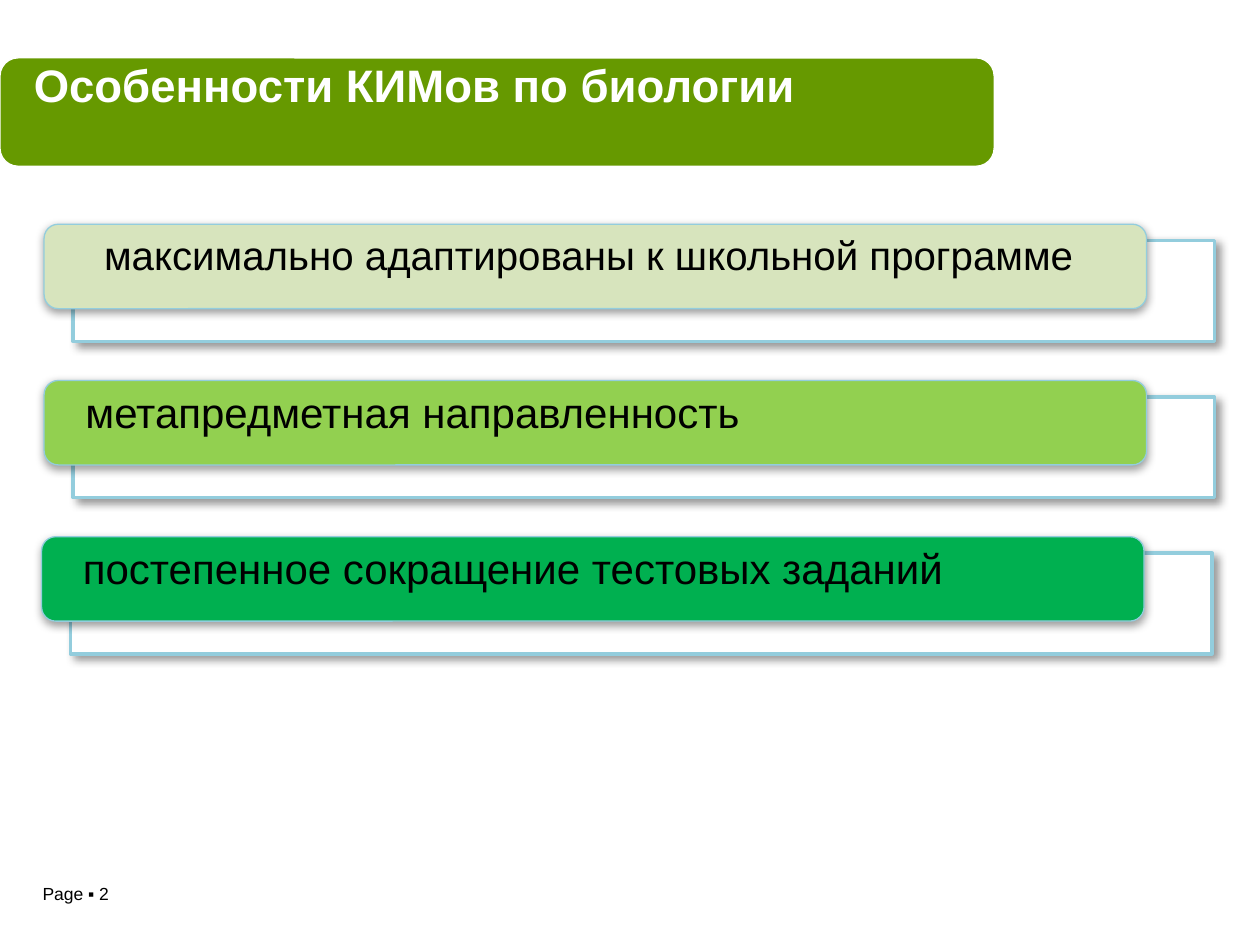
from dataclasses import dataclass
from typing import Optional

from lxml.etree import SubElement
from pptx import Presentation
from pptx.dml.color import RGBColor
from pptx.enum.shapes import MSO_SHAPE
from pptx.enum.text import MSO_ANCHOR, PP_ALIGN
from pptx.oxml.ns import qn
from pptx.util import Inches, Pt


@dataclass(frozen=True)
class Theme:
    font: str = "Arial"
    white: str = "FFFFFF"
    text: str = "000000"
    banner: str = "669900"
    outline: str = "93CDDD"
    title_size: float = 26
    footer_size: float = 10
    thin: float = 0.75
    thick: float = 2
    corner: float = 0.167


@dataclass(frozen=True)
class Box:
    left: float
    top: float
    width: float
    height: float

    def lengths(self) -> tuple:
        return tuple(Inches(n) for n in (self.left, self.top, self.width, self.height))


@dataclass(frozen=True)
class Shadow:
    opacity: int
    blur: float
    distance: float
    angle: int


@dataclass(frozen=True)
class Feature:
    wording: str
    fill: str
    left: float = 0.35
    size: float = 24
    align: PP_ALIGN = PP_ALIGN.LEFT


THEME = Theme()
FRAME_SHADOW = Shadow(40, 5, 3, 45)
BAR_SHADOW = Shadow(38, 5, 1.6, 90)
FIRST_TOP, FEATURE_STEP = 1.78, 1.24
FEATURES = [
    Feature("максимально адаптированы к школьной программе", "D7E4BD",
            size=23, align=PP_ALIGN.CENTER),
    Feature("метапредметная направленность", "92D050"),
    Feature("постепенное сокращение тестовых заданий", "00B050", left=0.33),
]


def add_panel(shapes, kind: MSO_SHAPE, box: Box, fill: str, outline: str,
              weight: float, shadow: Optional[Shadow] = None) -> None:
    panel = shapes.add_shape(kind, *box.lengths())
    if kind == MSO_SHAPE.ROUNDED_RECTANGLE:
        panel.adjustments[0] = THEME.corner
    panel.fill.solid()
    panel.fill.fore_color.rgb = RGBColor.from_string(fill)
    panel.line.color.rgb = RGBColor.from_string(outline)
    panel.line.width = Pt(weight)
    panel.shadow.inherit = False
    if shadow:
        effects = panel.element.spPr.find(qn("a:effectLst"))
        outer = SubElement(effects, qn("a:outerShdw"),
                           blurRad=str(Pt(shadow.blur)), dist=str(Pt(shadow.distance)),
                           dir=str(shadow.angle * 60000), algn="ctr", rotWithShape="0")
        color = SubElement(outer, qn("a:srgbClr"), val=THEME.text)
        SubElement(color, qn("a:alpha"), val=str(shadow.opacity * 1000))


def add_label(shapes, box: Box, wording: str, size: float, color: str = THEME.text,
              bold: bool = False, align: PP_ALIGN = PP_ALIGN.LEFT,
              line_spacing: float = 1.0) -> None:
    frame = shapes.add_textbox(*box.lengths()).text_frame
    frame.word_wrap = True
    frame.vertical_anchor = MSO_ANCHOR.TOP
    paragraph = frame.paragraphs[0]
    paragraph.alignment = align
    paragraph.line_spacing = line_spacing
    run = paragraph.add_run()
    run.text = wording
    run.font.name = THEME.font
    run.font.size = Pt(size)
    run.font.bold = bold
    run.font.color.rgb = RGBColor.from_string(color)


def add_feature(slide, feature: Feature, top: float) -> None:
    """Group an offset frame, the coloured bar over it and the bar's wording."""
    shapes = slide.shapes.add_group_shape().shapes
    inner_left = feature.left + 0.23
    add_panel(shapes, MSO_SHAPE.RECTANGLE, Box(inner_left, top + 0.13, 9.06, 0.8),
              THEME.white, THEME.outline, THEME.thick, FRAME_SHADOW)
    add_panel(shapes, MSO_SHAPE.ROUNDED_RECTANGLE, Box(feature.left, top, 8.75, 0.67),
              feature.fill, THEME.outline, THEME.thin, BAR_SHADOW)
    add_label(shapes, Box(inner_left, top, 8.2, 0.5), feature.wording,
              feature.size, align=feature.align)


def main() -> None:
    deck = Presentation()
    deck.slide_width, deck.slide_height = Inches(10), Inches(7.5)
    slide = deck.slides.add_slide(deck.slide_layouts[6])

    add_label(slide.shapes, Box(0.24, 6.96, 1.47, 0.27), "Page ▪ 2", THEME.footer_size)
    add_panel(slide.shapes, MSO_SHAPE.ROUNDED_RECTANGLE, Box(0, 0.46, 7.89, 0.86),
              THEME.banner, THEME.white, THEME.thin)
    add_label(slide.shapes, Box(0.17, 0.45, 9.47, 0.9), "Особенности КИМов по биологии",
              THEME.title_size, THEME.white, bold=True, line_spacing=0.9)
    for row, feature in enumerate(FEATURES):
        add_feature(slide, feature, FIRST_TOP + row * FEATURE_STEP)

    deck.save("out.pptx")


if __name__ == "__main__":
    main()
